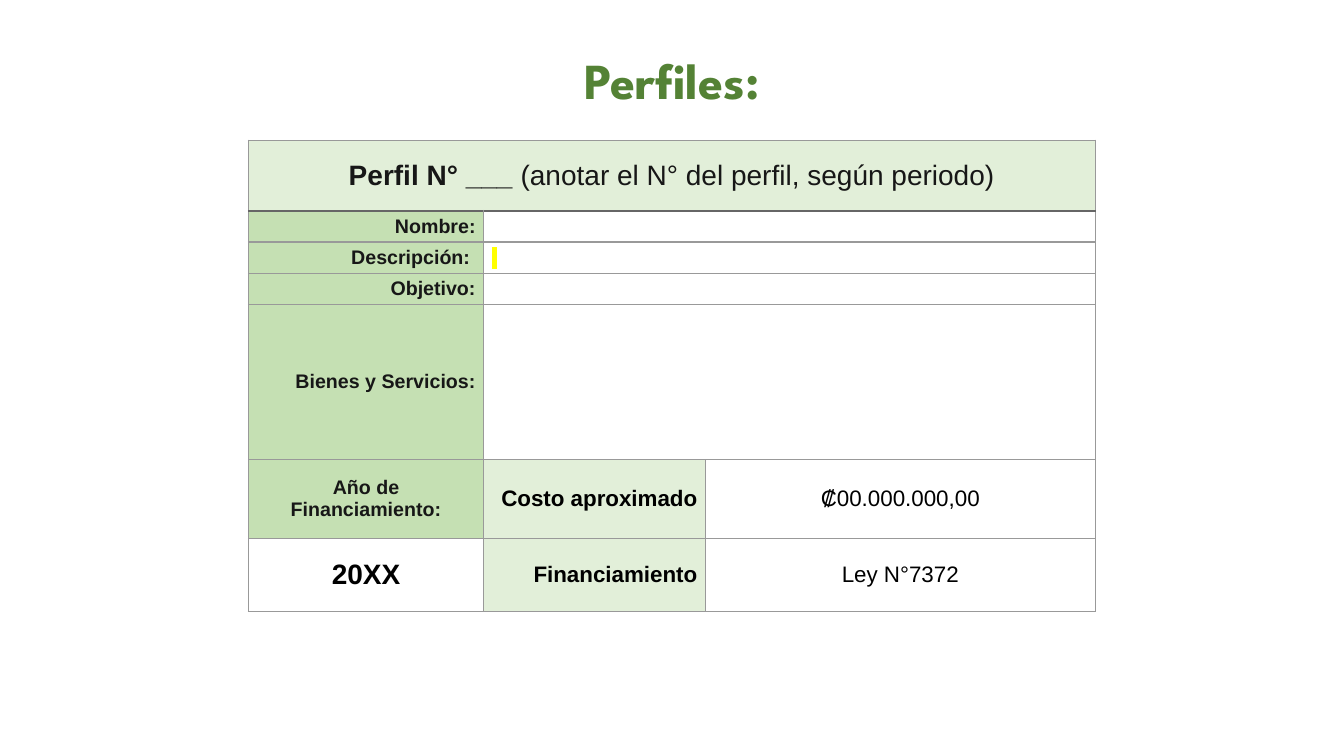
from lxml import etree
from pptx import Presentation
from pptx.dml.color import RGBColor
from pptx.enum import text
from pptx.oxml import ns
from pptx.util import Pt

C = {"title": "548235", "pale": "E2EFD9", "green": "C5E0B3", "white": "FFFFFF",
     "ink": "171717", "black": "000000", "line": "999999", "rule": "666666",
     "mark": "FFFF00"}
L, M, R = text.PP_ALIGN.LEFT, text.PP_ALIGN.CENTER, text.PP_ALIGN.RIGHT

TITLE = "Perfiles:"
# Cell: runs (text, bold), size, alignment, fill, text colour
BLANK = ([], 14, L, "white", "ink")


def label(caption, align=R):
    return ([(caption, True)], 14, align, "green", "ink")


def key(caption):
    return ([(caption, True)], 16, R, "pale", "black")


def value(caption, size=16, bold=False):
    return ([(caption, bold)], size, M, "white", "black")


HEADING = ([("Perfil N° ___ ", True), ("(anotar el N° del perfil, según periodo)", False)],
           20, M, "pale", "ink")
MARKED = ([(" ", False)], 14, L, "white", "ink")
ROWS = [
    (50.4, [HEADING]),
    (22.3, [label("Nombre:"), BLANK]),
    (22.3, [label("Descripción: "), MARKED]),
    (22.3, [label("Objetivo:"), BLANK]),
    (111, [label("Bienes y Servicios:"), BLANK]),
    (56, [label("Año de Financiamiento:", M), key("Costo aproximado"),
          value("₡00.000.000,00")]),
    (52.5, [value("20XX", 20, True), key("Financiamiento"), value("Ley N°7372")]),
]
COLS = [168, 158.4, 278.4]
LEFT, TOP = 177.5, 100.2


def rgb(name):
    return RGBColor.from_string(C[name])


def add_color(parent, tag, name):
    el = etree.SubElement(parent, ns.qn(tag))
    etree.SubElement(el, ns.qn("a:srgbClr"), val=C[name])
    return el


def set_font(font, size, color, bold, name="Arial"):
    font.size, font.bold, font.name = Pt(size), bold, name
    font.color.rgb = rgb(color)


def set_borders(cell, row):
    """Grey grid with a darker rule under the heading row."""
    tc_pr = cell._tc.get_or_add_tcPr()
    for side in "LRTB":
        heavy = (row, side) in ((0, "B"), (1, "T"))
        ln = etree.SubElement(tc_pr, ns.qn("a:ln" + side),
                              w=str(Pt(1.5 if heavy else 1)))
        add_color(ln, "a:solidFill", "rule" if heavy else "line")


def fill_cell(cell, content, row):
    runs, size, align, fill, color = content
    cell.fill.solid()
    cell.fill.fore_color.rgb = rgb(fill)
    cell.vertical_anchor = text.MSO_ANCHOR.MIDDLE
    cell.margin_left = cell.margin_right = Pt(5.75 if row else 8)
    cell.margin_top = cell.margin_bottom = Pt(0 if row else 3.6)
    p = cell.text_frame.paragraphs[0]
    p.alignment = align
    if not runs:
        p.font.size = Pt(size)
    for words, bold in runs:
        r = p.add_run()
        r.text = words
        set_font(r.font, size, color, bold)
        if content is MARKED:
            r_pr = r.font._element
            mark = add_color(r_pr, "a:highlight", "mark")
            r_pr.find(ns.qn("a:solidFill")).addnext(mark)


prs = Presentation()
prs.slide_width, prs.slide_height = Pt(960), Pt(540)
s = prs.slides.add_slide(prs.slide_layouts[5])

# Title
title = s.shapes.title
title.left, title.top, title.width, title.height = Pt(66), Pt(26), Pt(828), Pt(67)
tf = title.text_frame
tf.text = TITLE
tf.vertical_anchor = text.MSO_ANCHOR.MIDDLE
p = tf.paragraphs[0]
p.alignment, p.line_spacing = M, 0.9
set_font(p.runs[0].font, 36, "title", True, "League Spartan")

# Profile table
height = sum(h for h, _ in ROWS)
table = s.shapes.add_table(len(ROWS), len(COLS), Pt(LEFT), Pt(TOP),
                           Pt(sum(COLS)), Pt(height)).table
table.first_row = table.horz_banding = False
for column, width in zip(table.columns, COLS):
    column.width = Pt(width)
for i, (row_height, contents) in enumerate(ROWS):
    table.rows[i].height = Pt(row_height)
    for j in range(len(COLS)):
        set_borders(table.cell(i, j), i)
    # The last cell of a short row spans the remaining columns
    last = len(contents) - 1
    if last < len(COLS) - 1:
        table.cell(i, last).merge(table.cell(i, len(COLS) - 1))
    for j, content in enumerate(contents):
        fill_cell(table.cell(i, j), content, i)

prs.save("out.pptx")
